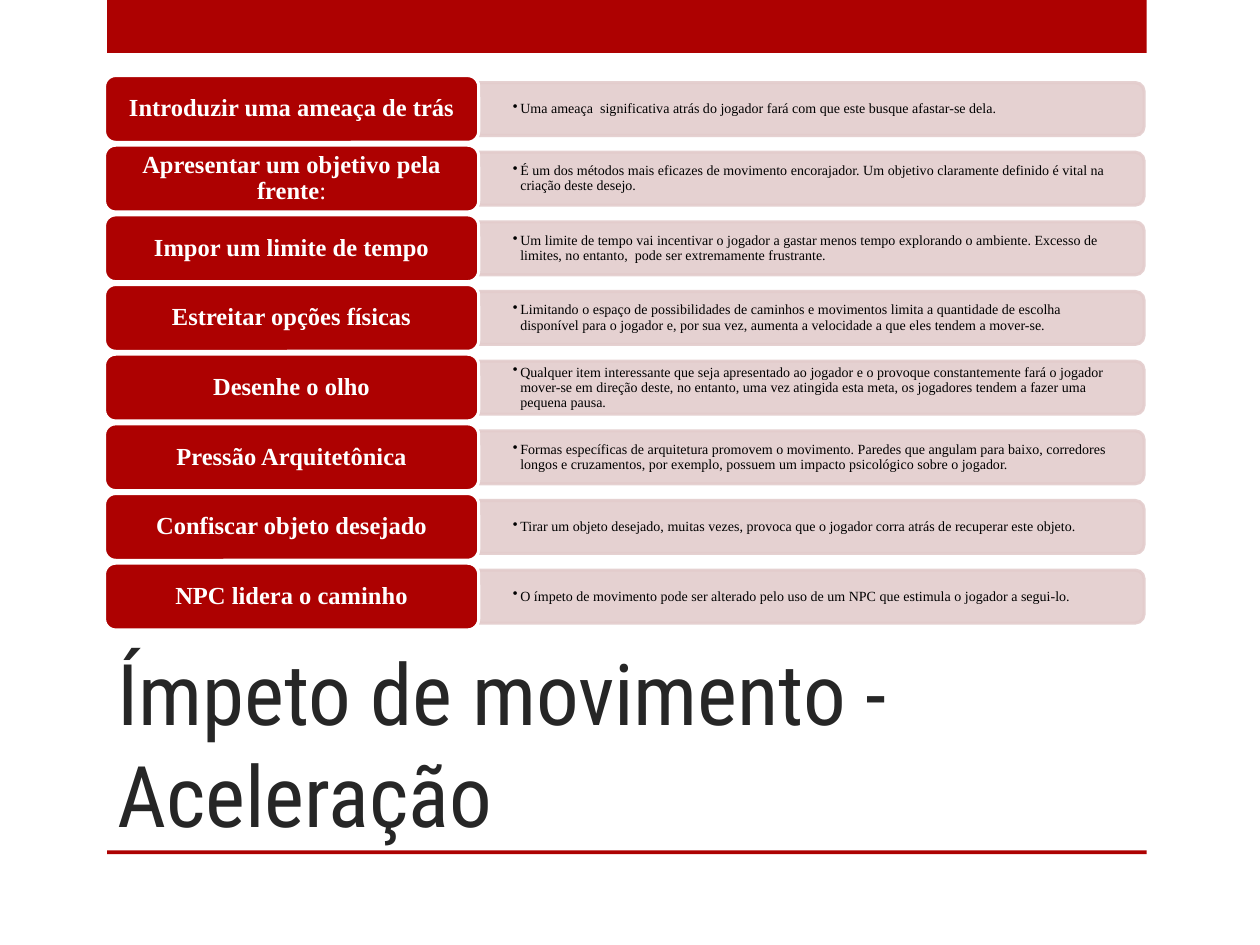
from dataclasses import dataclass

from lxml import etree
from pptx import Presentation
from pptx.dml.color import RGBColor
from pptx.enum import shapes, text
from pptx.oxml import ns
from pptx.util import Inches, Pt


@dataclass(frozen=True)
class Theme:
    red: RGBColor = RGBColor(0xAD, 0x01, 0x01)
    rose: RGBColor = RGBColor(0xE3, 0xCC, 0xCC)
    white: RGBColor = RGBColor(0xFF, 0xFF, 0xFF)
    black: RGBColor = RGBColor(0, 0, 0)
    charcoal: RGBColor = RGBColor(0x26, 0x26, 0x26)
    heading_font: str = "Roboto Condensed"
    body_font: str = "Times New Roman"
    heading_size: float = 48.6
    technique_size: float = 14
    detail_size: float = 8
    outline: float = 1.75


@dataclass(frozen=True)
class Technique:
    name: str
    detail: str
    suffix: str = ""


THEME = Theme()
TECHNIQUES = [
    Technique(
        "Introduzir uma ameaça de trás",
        "Uma ameaça  significativa atrás do jogador fará com que este busque afastar-se dela.",
    ),
    Technique(
        "Apresentar um objetivo pela frente",
        "É um dos métodos mais eficazes de movimento encorajador. Um objetivo claramente "
        "definido é vital na criação deste desejo.",
        ":",
    ),
    Technique(
        "Impor um limite de tempo",
        "Um limite de tempo vai incentivar o jogador a gastar menos tempo explorando o "
        "ambiente. Excesso de limites, no entanto,  pode ser extremamente frustrante.",
    ),
    Technique(
        "Estreitar opções físicas",
        "Limitando o espaço de possibilidades de caminhos e movimentos limita a quantidade "
        "de escolha disponível para o jogador e, por sua vez, aumenta a velocidade a que "
        "eles tendem a mover-se.",
    ),
    Technique(
        "Desenhe o olho",
        "Qualquer item interessante que seja apresentado ao jogador e o provoque "
        "constantemente fará o jogador mover-se em direção deste, no entanto, uma vez "
        "atingida esta meta, os jogadores tendem a fazer uma pequena pausa.",
    ),
    Technique(
        "Pressão Arquitetônica",
        "Formas específicas de arquitetura promovem o movimento. Paredes que angulam para "
        "baixo, corredores longos e cruzamentos, por exemplo, possuem um impacto "
        "psicológico sobre o jogador.",
    ),
    Technique(
        "Confiscar objeto desejado",
        "Tirar um objeto desejado, muitas vezes, provoca que o jogador corra atrás de "
        "recuperar este objeto.",
    ),
    Technique(
        "NPC lidera o caminho",
        "O ímpeto de movimento pode ser alterado pelo uso de um NPC que estimula o jogador "
        "a segui-lo.",
    ),
]

LEFT, SPLIT = 0.83, 3.8
NAME_HEIGHT = 0.53
PANEL_WIDTH, PANEL_HEIGHT = 5.28, 0.42
DETAIL_WIDTH, DETAIL_HEIGHT = 5.26, 0.38
FIRST_TOP, LAST_TOP = 0.6, 4.47
PITCH = (LAST_TOP - FIRST_TOP) / (len(TECHNIQUES) - 1)


def add_block(slide, kind, left: float, top: float, width: float, height: float,
              fill: RGBColor, outline: RGBColor | None = None):
    block = slide.shapes.add_shape(
        kind, Inches(left), Inches(top), Inches(width), Inches(height))
    block.shadow.inherit = False
    block.fill.solid()
    block.fill.fore_color.rgb = fill
    if outline is None:
        block.line.fill.background()
    else:
        block.line.color.rgb = outline
        block.line.width = Pt(THEME.outline)
    return block


def set_frame(frame, side: float, vertical: float) -> None:
    frame.word_wrap = True
    frame.auto_size = text.MSO_AUTO_SIZE.NONE
    frame.vertical_anchor = text.MSO_ANCHOR.MIDDLE
    frame.margin_left = frame.margin_right = Inches(side)
    frame.margin_top = frame.margin_bottom = Inches(vertical)


def add_run(paragraph, words: str, font: str, size: float, color: RGBColor,
            bold: bool = False) -> None:
    run = paragraph.add_run()
    run.text = words
    run.font.name = font
    run.font.size = Pt(size)
    run.font.color.rgb = color
    run.font.bold = bold


def add_bullet(paragraph, indent: float) -> None:
    properties = paragraph._p.get_or_add_pPr()
    properties.set("marL", str(Inches(indent)))
    properties.set("indent", str(-Inches(indent)))
    etree.SubElement(properties, ns.qn("a:buChar")).set("char", "•")


def add_detail(slide, detail: str, middle: float) -> None:
    panel = add_block(
        slide, shapes.MSO_SHAPE.ROUND_2_SAME_RECTANGLE,
        SPLIT + (PANEL_WIDTH - PANEL_HEIGHT) / 2, middle - PANEL_WIDTH / 2,
        PANEL_HEIGHT, PANEL_WIDTH, THEME.rose, THEME.rose)
    panel.rotation = 90
    for color in panel._element.spPr.iter(ns.qn("a:srgbClr")):
        etree.SubElement(color, ns.qn("a:alpha")).set("val", "90000")

    box = slide.shapes.add_textbox(
        Inches(SPLIT), Inches(middle - DETAIL_HEIGHT / 2),
        Inches(DETAIL_WIDTH), Inches(DETAIL_HEIGHT))
    set_frame(box.text_frame, 0.27, 0.14)
    paragraph = box.text_frame.paragraphs[0]
    paragraph.line_spacing = 0.9
    add_bullet(paragraph, 0.06)
    add_run(paragraph, detail, THEME.body_font, THEME.detail_size, THEME.black)


def add_technique(slide, technique: Technique, top: float) -> None:
    add_detail(slide, technique.detail, top + NAME_HEIGHT / 2)
    label = add_block(slide, shapes.MSO_SHAPE.ROUNDED_RECTANGLE, LEFT, top,
                      SPLIT - LEFT, NAME_HEIGHT, THEME.red, THEME.white)
    set_frame(label.text_frame, 0.09, 0.06)
    paragraph = label.text_frame.paragraphs[0]
    paragraph.alignment = text.PP_ALIGN.CENTER
    paragraph.line_spacing = 0.9
    add_run(paragraph, technique.name, THEME.body_font, THEME.technique_size,
            THEME.white, bold=True)
    if technique.suffix:
        add_run(paragraph, technique.suffix, THEME.body_font, THEME.technique_size,
                THEME.white)


def add_heading(slide, words: str) -> None:
    heading = slide.shapes.title
    heading.left, heading.top = Inches(LEFT), Inches(5)
    heading.width, heading.height = Inches(7.42), Inches(1.75)
    frame = heading.text_frame
    set_frame(frame, 0.1, 0.05)
    frame.vertical_anchor = text.MSO_ANCHOR.BOTTOM
    paragraph = frame.paragraphs[0]
    paragraph.alignment = text.PP_ALIGN.LEFT
    add_run(paragraph, words, THEME.heading_font, THEME.heading_size, THEME.charcoal)


def main() -> None:
    deck = Presentation()
    deck.slide_width, deck.slide_height = Inches(10), Inches(7.5)
    slide = deck.slides.add_slide(deck.slide_layouts[5])
    for top, height in ((0, 0.42), (6.75, 0.03)):
        add_block(slide, shapes.MSO_SHAPE.RECTANGLE, 0.85, top, 8.25, height, THEME.red)
    add_heading(slide, "Ímpeto de movimento - Aceleração")
    for index, technique in enumerate(TECHNIQUES):
        add_technique(slide, technique, FIRST_TOP + index * PITCH)
    deck.save("out.pptx")


if __name__ == "__main__":
    main()
